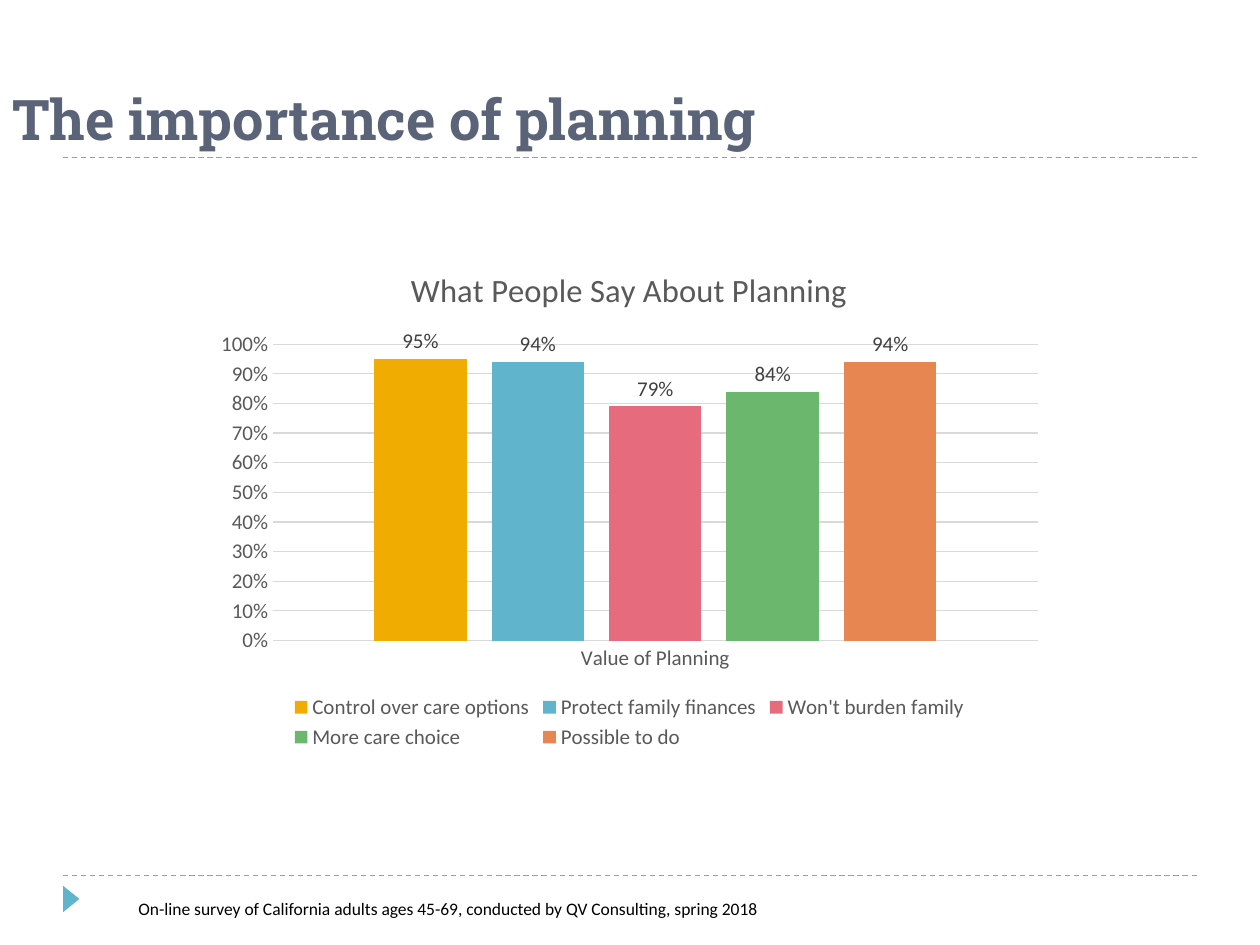
from lxml.etree import SubElement
from pptx import Presentation
from pptx.chart.data import CategoryChartData
from pptx.dml.color import RGBColor
from pptx.enum.chart import (XL_CHART_TYPE as ChartType, XL_LABEL_POSITION as LabelPosition,
                             XL_LEGEND_POSITION as LegendPosition, XL_TICK_MARK as TickMark)
from pptx.enum.dml import MSO_LINE as Dash
from pptx.enum.shapes import MSO_CONNECTOR as Connector, MSO_SHAPE as Shape
from pptx.enum.text import MSO_ANCHOR as Anchor
from pptx.oxml.ns import qn
from pptx.util import Inches, Pt

TITLE = "The importance of planning"
SOURCE = "On-line survey of California adults ages 45-69, conducted by QV Consulting, spring 2018"
CHART_TITLE = "What People Say About Planning"
CATEGORY = "Value of Planning"
ANSWERS = [
    ("Control over care options", 0.95, "F0AD00"),
    ("Protect family finances", 0.94, "60B5CC"),
    ("Won't burden family", 0.79, "E66C7D"),
    ("More care choice", 0.84, "6BB76D"),
    ("Possible to do", 0.94, "E88651"),
]
RULE_HEIGHTS = (6.95, 1.25)
THEME = {
    "heading_font": "Roboto Slab", "body_font": "Calibri",
    "heading": "5A6378", "accent": "60B5CC", "source": "000000",
    "chart_text": "595959", "label": "404040", "grid": "D9D9D9",
    "heading_size": 32, "chart_title_size": 18.6, "chart_size": 12, "source_size": 10,
}


def rgb(role):
    return RGBColor.from_string(THEME.get(role, role))


def style(font, size, color, face="body_font", bold=False):
    font.name, font.size, font.bold = THEME[face], Pt(THEME[size]), bold
    font.color.rgb = rgb(color)


def draw_line(line, color):
    line.color.rgb = rgb(color)
    line.width = Pt(0.75)


def add_text(slide, text, box, anchor, *look):
    frame = slide.shapes.add_textbox(*map(Inches, box)).text_frame
    frame.word_wrap = True
    frame.vertical_anchor = anchor
    frame.text = text
    style(frame.paragraphs[0].font, *look)


def add_rule(slide, y):
    rule = slide.shapes.add_connector(Connector.STRAIGHT, Inches(0.5), Inches(y), Inches(9.5), Inches(y))
    draw_line(rule.line, "accent")
    rule.line.dash_style = Dash.DASH
    SubElement(rule._element.spPr, qn("a:effectLst"))


def add_marker(slide):
    marker = slide.shapes.add_shape(Shape.ISOSCELES_TRIANGLE, *map(Inches, (0.46, 7.07, 0.21, 0.13)))
    marker.rotation = 90
    marker.shadow.inherit = False
    marker.fill.solid()
    marker.fill.fore_color.rgb = rgb("accent")
    marker.line.fill.background()


def add_answers_chart(slide):
    answers = CategoryChartData(number_format="0%")
    answers.categories = [CATEGORY]
    for name, share, _ in ANSWERS:
        answers.add_series(name, [share])
    box = map(Inches, (1.62, 1.94, 6.75, 4.05))
    chart = slide.shapes.add_chart(ChartType.COLUMN_CLUSTERED, *box, answers).chart
    style(chart.font, "chart_size", "chart_text")

    chart.has_title = True
    heading = chart.chart_title.text_frame
    heading.text = CHART_TITLE
    style(heading.paragraphs[0].font, "chart_title_size", "chart_text")
    chart.chart_title.include_in_layout = False

    chart.has_legend = True
    chart.legend.position = LegendPosition.BOTTOM
    chart.legend.include_in_layout = False
    style(chart.legend.font, "chart_size", "chart_text")

    for axis in (chart.category_axis, chart.value_axis):
        axis.major_tick_mark = axis.minor_tick_mark = TickMark.NONE
        style(axis.tick_labels.font, "chart_size", "chart_text")
    draw_line(chart.category_axis.format.line, "grid")
    shares = chart.value_axis
    shares.minimum_scale, shares.maximum_scale, shares.major_unit = 0, 1, 0.1
    shares.tick_labels.number_format = "0%"
    shares.tick_labels.number_format_is_linked = False
    shares.format.line.fill.background()
    draw_line(shares.major_gridlines.format.line, "grid")

    plot = chart.plots[0]
    plot.gap_width, plot.overlap, plot.vary_by_categories = 219, -27, False
    for column, (_, _, color) in zip(plot.series, ANSWERS):
        column.format.fill.solid()
        column.format.fill.fore_color.rgb = rgb(color)
        labels = column.data_labels
        labels.show_value = True
        labels.position = LabelPosition.OUTSIDE_END
        labels.number_format, labels.number_format_is_linked = "0%", False
        style(labels.font, "chart_size", "label")


def main():
    """Build the slide on the value of planning and save it."""
    deck = Presentation()
    deck.slide_width, deck.slide_height = Inches(10), Inches(7.5)
    slide = deck.slides.add_slide(deck.slide_layouts[6])
    for y in RULE_HEIGHTS:
        add_rule(slide, y)
    add_marker(slide)
    add_text(slide, TITLE, (0, 0.17, 9.83, 1.08), Anchor.BOTTOM,
             "heading_size", "heading", "heading_font", True)
    add_answers_chart(slide)
    add_text(slide, SOURCE, (1, 7.08, 7.58, 0.27), Anchor.TOP, "source_size", "source")
    deck.save("out.pptx")


if __name__ == "__main__":
    main()
